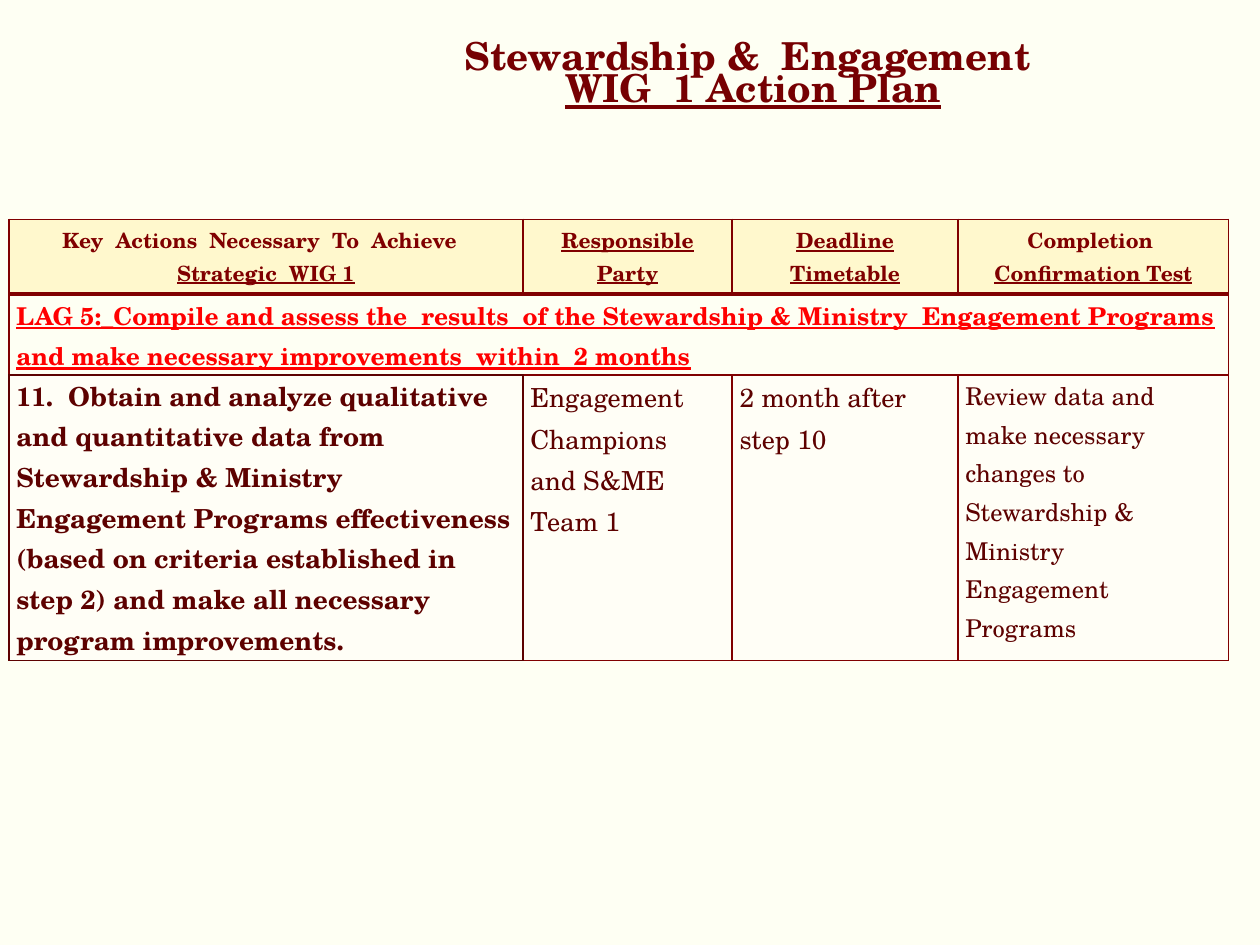
from pptx import Presentation
from pptx.dml.color import RGBColor
from pptx.enum.text import MSO_ANCHOR, PP_ALIGN
from pptx.oxml import parse_xml
from pptx.oxml.ns import nsdecls
from pptx.util import Cm, Pt

COLORS = {
    "page": "FEFFF3", "title": "760002", "maroon": "800000", "dark": "5D0100",
    "red": "FF0000", "header": "FFF8CD", "body": "FFFEF6",
}
FONT = "TeX Gyre Schola"


def write(para, text, size=12, color="maroon", bold=True, underline=False,
          align=PP_ALIGN.LEFT, spacing=None):
    para.alignment = align
    if spacing:
        para.line_spacing = spacing
    span = para.add_run()
    span.text = text
    font = span.font
    font.name, font.size, font.bold, font.underline = FONT, Pt(size), bold, underline
    font.color.rgb = RGBColor.from_string(COLORS[color])


class Page:
    def __init__(self, deck):
        self.slide = deck.slides.add_slide(deck.slide_layouts[6])
        fill = self.slide.background.fill
        fill.solid()
        fill.fore_color.rgb = RGBColor.from_string(COLORS["page"])

    def title(self, left, top, width, height, first, second):
        box = self.slide.shapes.add_textbox(Cm(left), Cm(top), Cm(width), Cm(height))
        frame = box.text_frame
        frame.word_wrap = True
        frame.vertical_anchor = MSO_ANCHOR.MIDDLE
        para = frame.paragraphs[0]
        style = dict(size=22, color="title", align=PP_ALIGN.CENTER, spacing=0.7)
        write(para, first, **style)
        para.add_line_break()
        write(para, second, underline=True, **style)

    def table(self, left, top, widths, heights):
        frame = self.slide.shapes.add_table(
            len(heights), len(widths), Cm(left), Cm(top), Cm(sum(widths)), Cm(sum(heights)))
        table = frame.table
        table.first_row = table.horz_banding = False
        for column, width in zip(table.columns, widths):
            column.width = Cm(width)
        for row, height in zip(table.rows, heights):
            row.height = Cm(height)
        return table

    def cell(self, cell, lines, fill=None, margins=(0.15, 0), borders=None, **style):
        cell.margin_left = cell.margin_right = Cm(margins[0])
        cell.margin_top = cell.margin_bottom = Cm(margins[1])
        self.borders(cell, borders or {})
        if fill:
            cell.fill.solid()
            cell.fill.fore_color.rgb = RGBColor.from_string(COLORS[fill])
        else:
            cell.fill.background()
        frame = cell.text_frame
        for index, (text, underline) in enumerate(lines):
            para = frame.add_paragraph() if index else frame.paragraphs[0]
            write(para, text, underline=underline, **style)

    def borders(self, cell, changes):
        properties = cell._tc.get_or_add_tcPr()
        for side in "LRTB":
            color, width = changes.get(side, ("maroon", 1))
            properties.append(parse_xml(
                f'<a:ln{side} {nsdecls("a")} w="{Pt(width)}"><a:solidFill>'
                f'<a:srgbClr val="{COLORS[color]}"/></a:solidFill></a:ln{side}>'))


def main():
    deck = Presentation()
    deck.slide_width, deck.slide_height = Cm(25.4), Cm(19.05)
    page = Page(deck)

    # Action plan table
    table = page.table(0.18, 4.42, [10.36, 4.22, 4.55, 5.46], [1.07, 0.84, 2.24])

    # Column headings
    headings = [
        [("Key  Actions  Necessary  To  Achieve  ", False), ("Strategic  WIG 1", True)],
        [("Responsible Party", True)],
        [("Deadline Timetable", True)],
        [("Completion ", False), ("Confirmation Test", True)],
    ]
    for column, lines in enumerate(headings):
        page.cell(table.cell(0, column), lines, fill="header", margins=(0.18, 0.1),
                  borders={"B": ("maroon", 3)}, align=PP_ALIGN.CENTER)

    # Goal across all columns
    goal = table.cell(1, 0)
    goal.merge(table.cell(1, 3))
    page.cell(goal, [(
        "LAG 5:_Compile and assess the  results  of the Stewardship & Ministry  "
        "Engagement Programs and make necessary improvements  within  2 months", True)],
        borders={"B": ("dark", 1)}, size=14, color="red", spacing=1.07)

    # Action step
    dark = ("dark", 1)
    step = [
        (["11.  Obtain and analyze qualitative and quantitative data from Stewardship "
          "& Ministry  Engagement Programs effectiveness (based on criteria established "
          "in step 2) and make all necessary program improvements."],
         dict(size=15, bold=True, borders=dict.fromkeys("LRTB", dark))),
        (["Engagement Champions", "and S&ME Team 1"],
         dict(size=15, spacing=1.07, borders={"L": dark})),
        (["2 month after step 10"], dict(size=15, spacing=1.07)),
        (["Review data and make necessary changes to Stewardship & Ministry  "
          "Engagement Programs"], dict(size=14, spacing=1.07)),
    ]
    for column, (texts, style) in enumerate(step):
        page.cell(table.cell(2, column), [(text, False) for text in texts],
                  **{"fill": "body", "color": "dark", "bold": False, **style})

    # Title
    page.title(7.82, 0.36, 14.73, 2.39, "Stewardship &  Engagement ", "WIG  1 Action Plan")

    deck.save("out.pptx")


if __name__ == "__main__":
    main()
